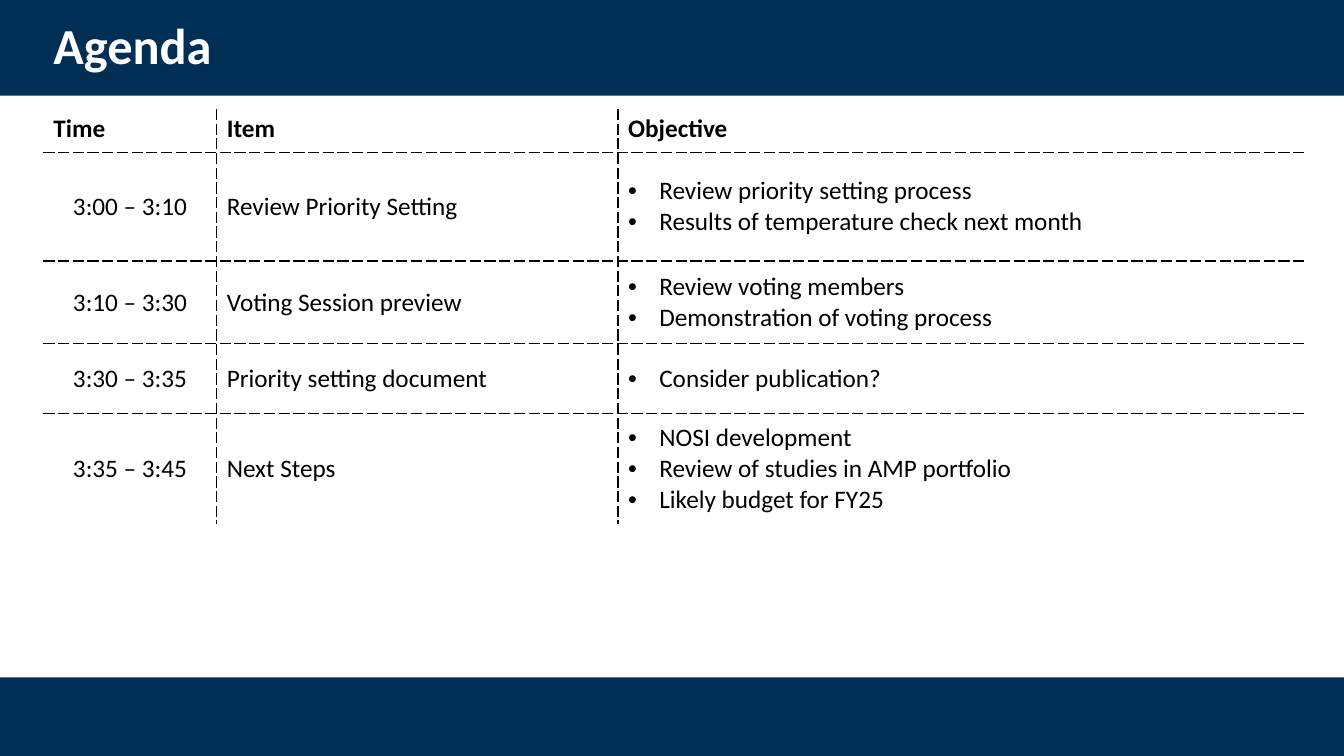
from lxml.etree import SubElement
from pptx import Presentation
from pptx.dml.color import RGBColor
from pptx.enum.shapes import MSO_SHAPE as Shape
from pptx.enum.text import MSO_ANCHOR as Anchor, PP_ALIGN as Align
from pptx.oxml.ns import qn
from pptx.util import Inches, Pt

COLORS = {"navy": "002F56", "white": "FFFFFF", "black": "000000"}
FONT = "Calibri"
COLUMN_WIDTHS = [1.72, 3.98, 6.81]
ROW_HEIGHTS = [0.43, 1.08, 0.82, 0.69, 1.1]
HEADINGS = ["Time", "Item", "Objective"]
AGENDA = [
    ("3:00 – 3:10", "Review Priority Setting",
     ["Review priority setting process", "Results of temperature check next month"]),
    ("3:10 – 3:30", "Voting Session preview",
     ["Review voting members", "Demonstration of voting process"]),
    ("3:30 – 3:35", "Priority setting document", ["Consider publication?"]),
    ("3:35 – 3:45", "Next Steps",
     ["NOSI development", "Review of studies in AMP portfolio", "Likely budget for FY25"]),
]


def color(name):
    """Return the named colour."""
    return RGBColor.from_string(COLORS[name])


def add_span(para, text, size, shade, bold=False):
    """Add one formatted run to a paragraph."""
    span = para.add_run()
    span.text = text
    span.font.name = FONT
    span.font.size = Pt(size)
    span.font.bold = bold
    span.font.color.rgb = color(shade)


def add_bar(page, left, top, width, height):
    """Put a navy bar behind the title."""
    bar = page.shapes.add_shape(
        Shape.RECTANGLE, Inches(left), Inches(top), Inches(width), Inches(height))
    bar.shadow.inherit = False
    bar.fill.solid()
    bar.fill.fore_color.rgb = color("navy")
    bar.line.fill.background()
    page.shapes.title.element.addprevious(bar.element)


def place_title(page, text, left, top, width, height):
    """Place and format the title placeholder."""
    title = page.shapes.title
    title.left, title.top = Inches(left), Inches(top)
    title.width, title.height = Inches(width), Inches(height)
    box = title.text_frame
    box.word_wrap = True
    box.vertical_anchor = Anchor.MIDDLE
    para = box.paragraphs[0]
    para.alignment = Align.LEFT
    para.line_spacing = 0.9
    add_span(para, text, 36, "white", bold=True)


def add_bullet(para):
    """Give a paragraph a hanging bullet."""
    props = para._p.get_or_add_pPr()
    props.set("marL", str(Inches(0.31)))
    props.set("indent", str(-Inches(0.31)))
    SubElement(props, qn("a:buFont"), typeface="Arial")
    SubElement(props, qn("a:buChar"), char="•")


def set_borders(cell, dashed_sides):
    """Dash the given sides of a cell and clear the others."""
    props = cell._tc.get_or_add_tcPr()
    for side in "LRTB":
        line = SubElement(props, qn(f"a:ln{side}"), w=str(Pt(1)))
        if side not in dashed_sides:
            SubElement(line, qn("a:noFill"))
            continue
        fill = SubElement(line, qn("a:solidFill"))
        SubElement(fill, qn("a:srgbClr"), val=COLORS["black"])
        SubElement(line, qn("a:prstDash"), val="sysDash")


def fill_cell(cell, content, header, column):
    """Write the text of one agenda cell."""
    cell.fill.solid()
    cell.fill.fore_color.rgb = color("white")
    cell.vertical_anchor = Anchor.TOP if header else Anchor.MIDDLE
    box = cell.text_frame
    lines = content if isinstance(content, list) else [content]
    for index, text in enumerate(lines):
        para = box.add_paragraph() if index else box.paragraphs[0]
        centered = column == 0 and not header
        para.alignment = Align.CENTER if centered else Align.LEFT
        if isinstance(content, list):
            add_bullet(para)
        add_span(para, text, 18, "black", bold=header)


def add_agenda(page, left, top):
    """Add the agenda table with dashed inner rules."""
    rows = [HEADINGS, *AGENDA]
    table = page.shapes.add_table(
        len(rows), len(HEADINGS), Inches(left), Inches(top),
        Inches(sum(COLUMN_WIDTHS)), Inches(sum(ROW_HEIGHTS))).table
    table.first_row = table.horz_banding = False
    for column, width in zip(table.columns, COLUMN_WIDTHS):
        column.width = Inches(width)
    for row, height in zip(table.rows, ROW_HEIGHTS):
        row.height = Inches(height)
    for r, row in enumerate(rows):
        for c, content in enumerate(row):
            inner = {"L": c > 0, "R": c < len(row) - 1,
                     "T": r > 0, "B": r < len(rows) - 1}
            cell = table.cell(r, c)
            set_borders(cell, [side for side, shown in inner.items() if shown])
            fill_cell(cell, content, r == 0, c)


def main():
    """Build and save the agenda slide."""
    deck = Presentation()
    deck.slide_width, deck.slide_height = Inches(13.33), Inches(7.5)
    page = deck.slides.add_slide(deck.slide_layouts[5])
    add_bar(page, 0, 0, 13.33, 0.95)
    add_bar(page, 0, 6.72, 13.33, 0.78)
    place_title(page, "Agenda", 0.43, 0.11, 11.5, 0.74)
    add_agenda(page, 0.43, 1.08)
    deck.save("out.pptx")


if __name__ == "__main__":
    main()
